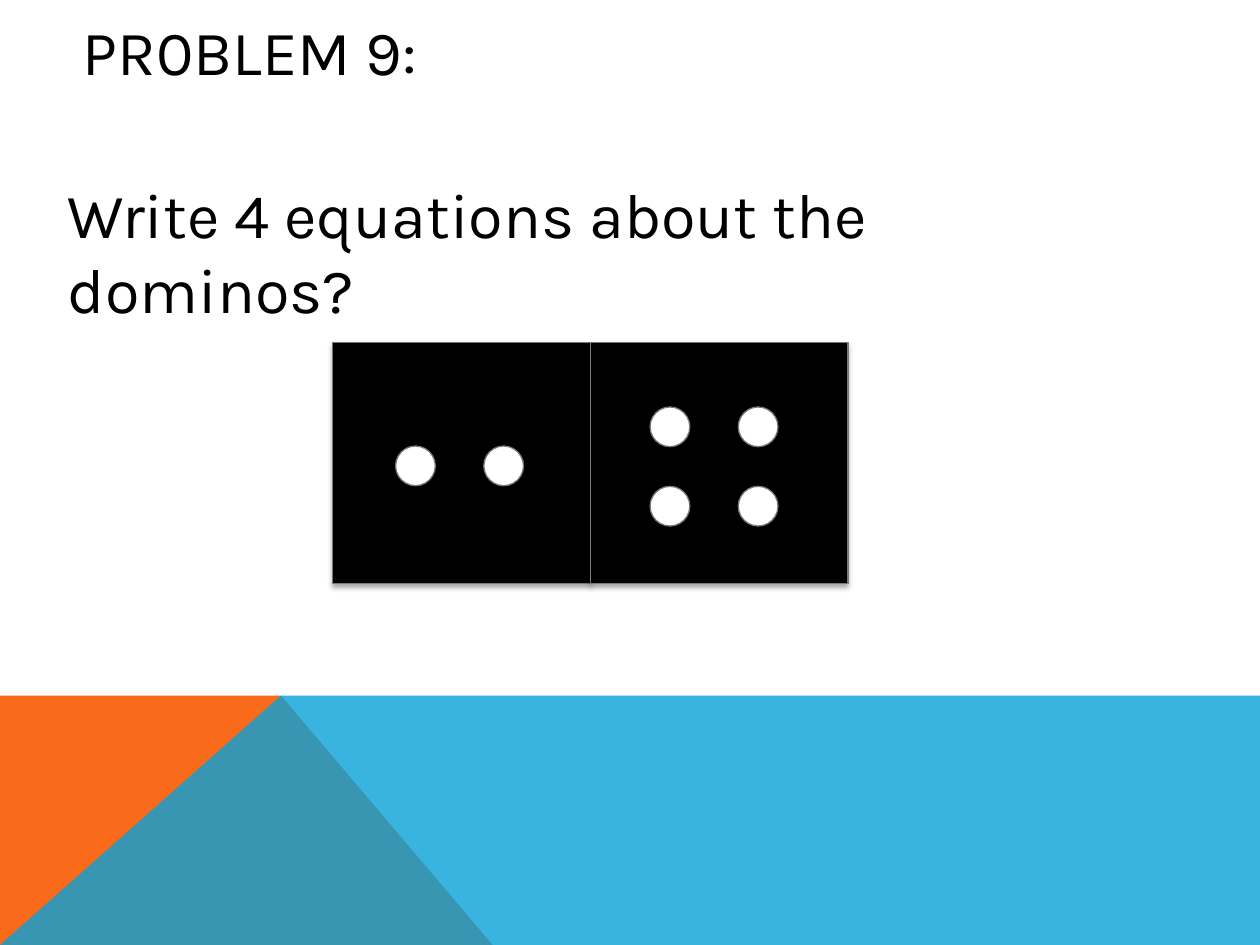
"""Build the domino problem slide."""
import dataclasses

import lxml.etree
import pptx
import pptx.dml.color
import pptx.enum.shapes
import pptx.enum.text
import pptx.oxml.ns
import pptx.util

KIND = pptx.enum.shapes.MSO_SHAPE
ANCHOR = pptx.enum.text.MSO_ANCHOR
WIDE, HIGH = pptx.util.Inches(10), pptx.util.Inches(7.5)
BLACK, WHITE, GREY = "000000", "FFFFFF", "76787B"
FONT = {"name": "Karla", "size": pptx.util.Pt(36)}
BLUR, DROP, DOWN, SHADE = pptx.util.Pt(3.1), pptx.util.Pt(1.8), 5400000, 35000


@dataclasses.dataclass
class Box:
    """Place and size in percent of the slide."""
    left: float
    top: float
    width: float
    height: float

    def spans(self) -> tuple:
        """Return left, top, width and height as lengths."""
        return (*point(self.left, self.top), *point(self.width, self.height))


@dataclasses.dataclass
class Half:
    """One half of the domino with its dots."""
    left: float
    dots: list


@dataclasses.dataclass
class Band:
    """One area of the footer."""
    dots: list
    fill: str
    alpha: int


@dataclasses.dataclass
class Label:
    """One line of text with its frame."""
    box: Box
    text: str
    anchor: int


TOP, SIDE, TALL = 36.27, 20.45, 25.47
START, STEP = 26.4, 7
ROWS = (43.07, 51.47)
HALVES = [
    Half(START, [(31.4 + STEP * col, 47.2) for col in range(2)]),
    Half(START + SIDE, [(51.6 + STEP * col, row) for row in ROWS for col in range(2)]),
]
EDGE, PEAK = 73.6, 22.3
BANDS = [
    Band([(0, 100), (0, EDGE), (PEAK, EDGE), (39.1, 100)], "F96A1B", 100),
    Band([(0, 100), (PEAK, EDGE), (100, EDGE), (100, 100)], "08A1D9", 80),
]
LABELS = [
    Label(Box(5.6, 1.33, 82.2, 8), "PR0BLEM 9:", ANCHOR.MIDDLE),
    Label(Box(4.4, 17.87, 88.5, 18.4), "Write 4 equations about the dominos?", ANCHOR.TOP),
]


def point(left: float, top: float) -> tuple:
    """Turn percents of the slide into lengths."""
    return round(WIDE * left / 100), round(HIGH * top / 100)


def tint(code: str) -> pptx.dml.color.RGBColor:
    """Turn a hex string into a colour."""
    return pptx.dml.color.RGBColor.from_string(code)


def child(host, tag: str, **values):
    """Add a drawing element with its attributes."""
    item = lxml.etree.SubElement(host, pptx.oxml.ns.qn(tag))
    for name, value in values.items():
        item.set(name, str(value))
    return item


def paint(shape, code: str) -> None:
    """Fill a shape with one colour and drop its theme shadow."""
    shape.fill.solid()
    shape.fill.fore_color.rgb = tint(code)
    shape.shadow.inherit = False


def draw_band(slide, band: Band) -> None:
    """Draw one footer area."""
    first, *rest = [point(*dot) for dot in band.dots]
    pen = slide.shapes.build_freeform(*first)
    pen.add_line_segments(rest, close=True)
    shape = pen.convert_to_shape()
    paint(shape, band.fill)
    shape.line.fill.background()
    if band.alpha < 100:
        color = shape.element.spPr.find(".//" + pptx.oxml.ns.qn("a:srgbClr"))
        child(color, "a:alpha", val=band.alpha * 1000)


def draw_piece(slide, kind: int, box: Box, code: str) -> None:
    """Draw one outlined piece with a soft shadow."""
    shape = slide.shapes.add_shape(kind, *box.spans())
    shape.line.color.rgb = tint(GREY)
    shape.line.width = pptx.util.Pt(0.75)
    paint(shape, code)
    host = shape.element.spPr.find(pptx.oxml.ns.qn("a:effectLst"))
    cast = child(host, "a:outerShdw", blurRad=BLUR, dist=DROP, dir=DOWN, rotWithShape=0)
    color = child(cast, "a:srgbClr", val=BLACK)
    child(color, "a:alpha", val=SHADE)


def draw_label(slide, label: Label) -> None:
    """Write one text."""
    frame = slide.shapes.add_textbox(*label.box.spans()).text_frame
    for name, value in {"word_wrap": True, "vertical_anchor": label.anchor}.items():
        setattr(frame, name, value)
    run = frame.paragraphs[0].add_run()
    run.text = label.text
    for name, value in FONT.items():
        setattr(run.font, name, value)
    run.font.color.rgb = tint(BLACK)


def main() -> None:
    """Build and save the slide."""
    deck = pptx.Presentation()
    deck.slide_width, deck.slide_height = WIDE, HIGH
    slide = deck.slides.add_slide(deck.slide_layouts[6])
    for band in BANDS:
        draw_band(slide, band)
    for label in LABELS:
        draw_label(slide, label)
    for half in HALVES:
        draw_piece(slide, KIND.RECTANGLE, Box(half.left, TOP, SIDE, TALL), BLACK)
    for half in HALVES:
        for dot in half.dots:
            draw_piece(slide, KIND.OVAL, Box(*dot, 3.15, 4.2), WHITE)
    deck.save("out.pptx")


if __name__ == "__main__":
    main()
